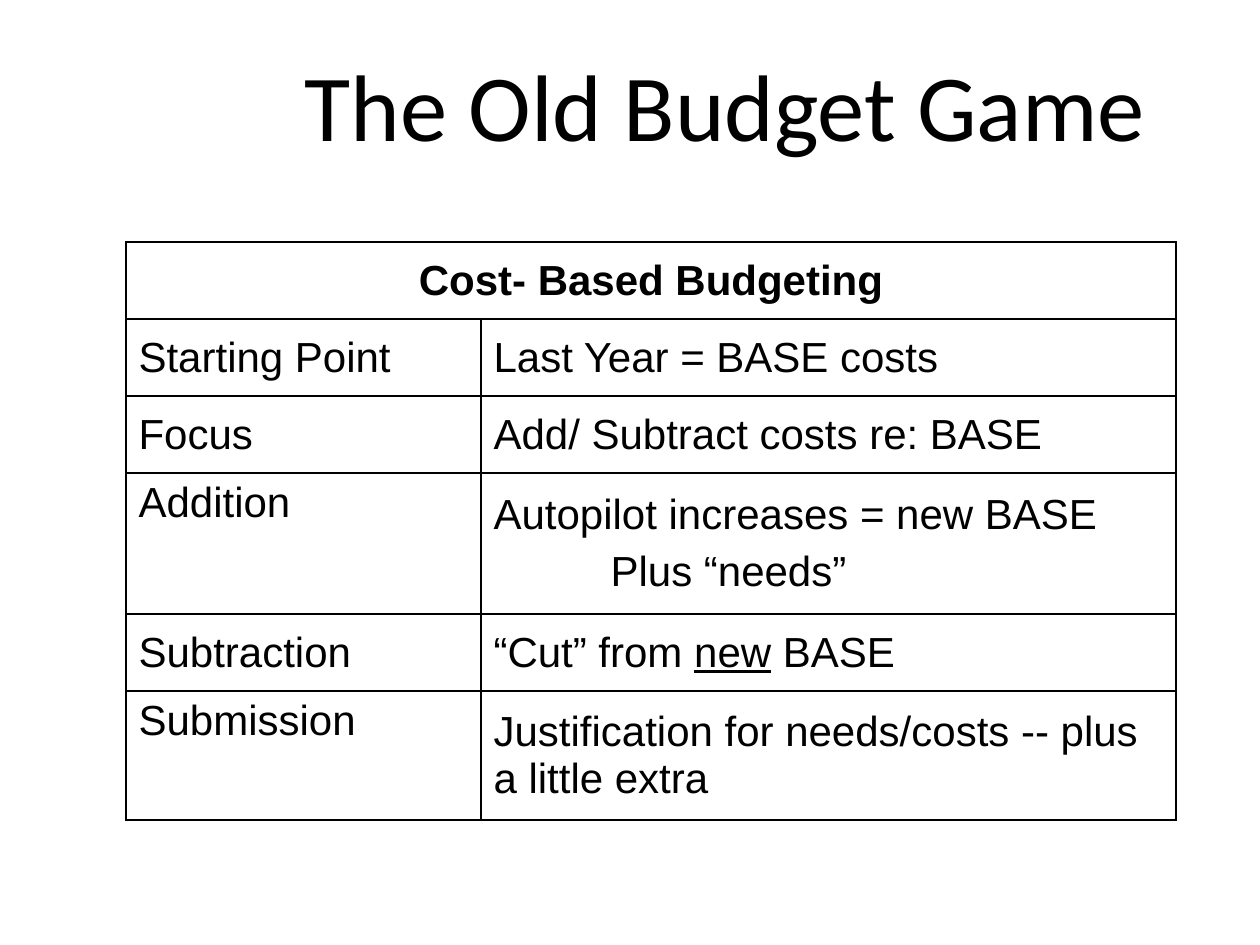
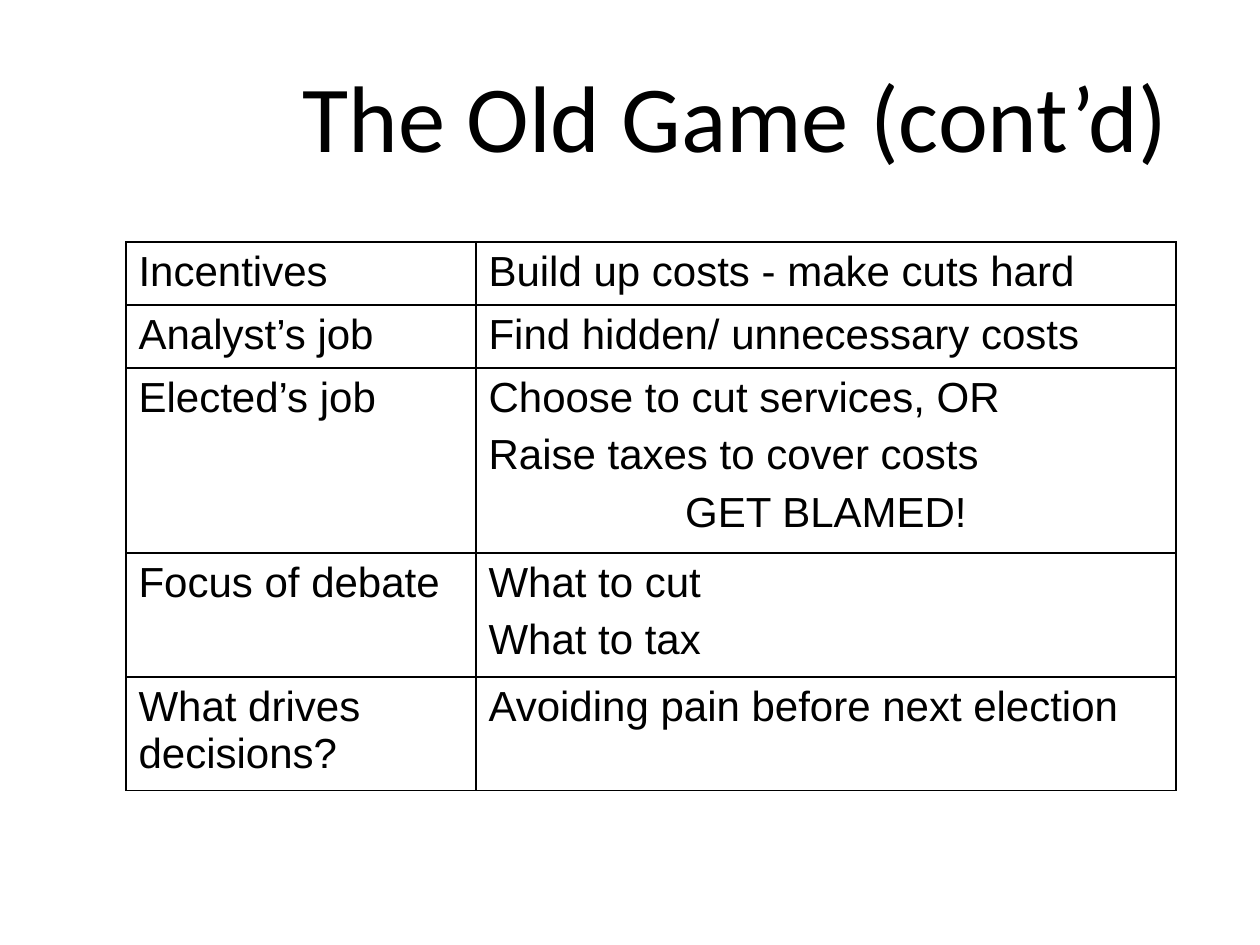
from lxml import etree
from pptx import Presentation
from pptx.dml.color import RGBColor
from pptx.enum.text import MSO_ANCHOR, PP_ALIGN
from pptx.oxml.ns import qn
from pptx.util import Emu, Pt

TOP, MIDDLE = MSO_ANCHOR.TOP, MSO_ANCHOR.MIDDLE
LEFT, CENTER = PP_ALIGN.LEFT, PP_ALIGN.CENTER
BLACK, WHITE = "000000", "FFFFFF"
TITLE_FONT, BODY_FONT = "Calibri", "Arial"
TABLE_X, TABLE_Y = 126, 242
INDENT = 117
BORDERS = ("a:lnL", "a:lnR", "a:lnT", "a:lnB")

SLIDES = [
    {
        "title": "The Old Budget Game",
        "title_box": (242, 53, 966, 101),
        "cols": (355, 695),
        "heading": "Cost- Based Budgeting",
        "anchor": MIDDLE,
        "rows": [
            (77, "Starting Point", ["Last Year = BASE costs"]),
            (77, "Focus", ["Add/ Subtract costs re: BASE"]),
            (141, "Addition", ["Autopilot increases = new BASE",
                               ("Plus “needs”", {"indent": INDENT})]),
            (77, "Subtraction", [("“Cut” from |new| BASE", {})]),
            (129, "Submission", ["Justification for needs/costs -- plus a little extra"]),
        ],
        "top_labels": ("Addition", "Submission"),
    },
    {
        "title": "The Old Game (cont’d)",
        "title_box": (252, 64, 966, 101),
        "cols": (350, 700),
        "heading": None,
        "anchor": TOP,
        "rows": [
            (60, "Incentives", ["Build up costs - make cuts hard"]),
            (59, "Analyst’s job", ["Find hidden/ unnecessary costs"]),
            (174, "Elected’s job", ["Choose to cut services, OR",
                                    "Raise taxes to cover costs",
                                    ("GET BLAMED!", {"align": CENTER})]),
            (117, "Focus of debate", ["What to cut", "What to tax"]),
            (106, "What drives decisions?", ["Avoiding pain before next election"]),
        ],
        "top_labels": (),
    },
]


def px(n):
    return Emu(round(n * 914400 / 126))


def rgb(color):
    return RGBColor.from_string(color)


def add_text(p, text, size=24, font=BODY_FONT, color=BLACK, bold=False,
             align=LEFT, after=6, indent=0):
    p.alignment = align
    p.space_after = Pt(after)
    if indent:
        p._p.get_or_add_pPr().set("marL", str(px(indent)))
    for i, part in enumerate(text.split("|")):
        r = p.add_run()
        r.text = part
        r.font.size = Pt(size)
        r.font.name = font
        r.font.color.rgb = rgb(color)
        r.font.bold = bold
        r.font.underline = i % 2 == 1


def add_title(slide, text, box):
    tf = slide.shapes.add_textbox(*map(px, box)).text_frame
    tf.word_wrap = True
    tf.vertical_anchor = MIDDLE
    add_text(tf.paragraphs[0], text, size=54, font=TITLE_FONT, align=CENTER, after=0)


def style_cell(cell):
    tcPr = cell._tc.get_or_add_tcPr()
    for tag in BORDERS:
        ln = etree.SubElement(tcPr, qn(tag), w=str(Pt(1)))
        fill = etree.SubElement(ln, qn("a:solidFill"))
        etree.SubElement(fill, qn("a:srgbClr"), val=BLACK)
    cell.fill.solid()
    cell.fill.fore_color.rgb = rgb(WHITE)


def fill_cell(cell, paragraphs, anchor):
    cell.vertical_anchor = anchor
    tf = cell.text_frame
    for i, item in enumerate(paragraphs):
        text, fmt = (item, {}) if isinstance(item, str) else item
        add_text(tf.add_paragraph() if i else tf.paragraphs[0], text, **fmt)


def add_table(slide, data):
    rows, cols, anchor = data["rows"], data["cols"], data["anchor"]
    first = 1 if data["heading"] else 0
    heights = [77] * first + [row[0] for row in rows]
    table = slide.shapes.add_table(len(heights), len(cols), px(TABLE_X), px(TABLE_Y),
                                   px(sum(cols)), px(sum(heights))).table
    table.first_row = table.horz_banding = False
    for col, width in zip(table.columns, cols):
        col.width = px(width)
    for row, height in zip(table.rows, heights):
        row.height = px(height)
    for cell in table.iter_cells():
        style_cell(cell)
    if data["heading"]:
        table.cell(0, 0).merge(table.cell(0, len(cols) - 1))
        fill_cell(table.cell(0, 0),
                  [(data["heading"], {"bold": True, "align": CENTER})], anchor)
    for i, (_, label, answer) in enumerate(rows, first):
        label_anchor = TOP if label in data["top_labels"] else anchor
        fill_cell(table.cell(i, 0), [label], label_anchor)
        fill_cell(table.cell(i, 1), answer, anchor)


def main():
    prs = Presentation()
    prs.slide_width, prs.slide_height = px(1260), px(945)
    for data in SLIDES:
        slide = prs.slides.add_slide(prs.slide_layouts[6])
        add_title(slide, data["title"], data["title_box"])
        add_table(slide, data)
    prs.save("out.pptx")


if __name__ == "__main__":
    main()
